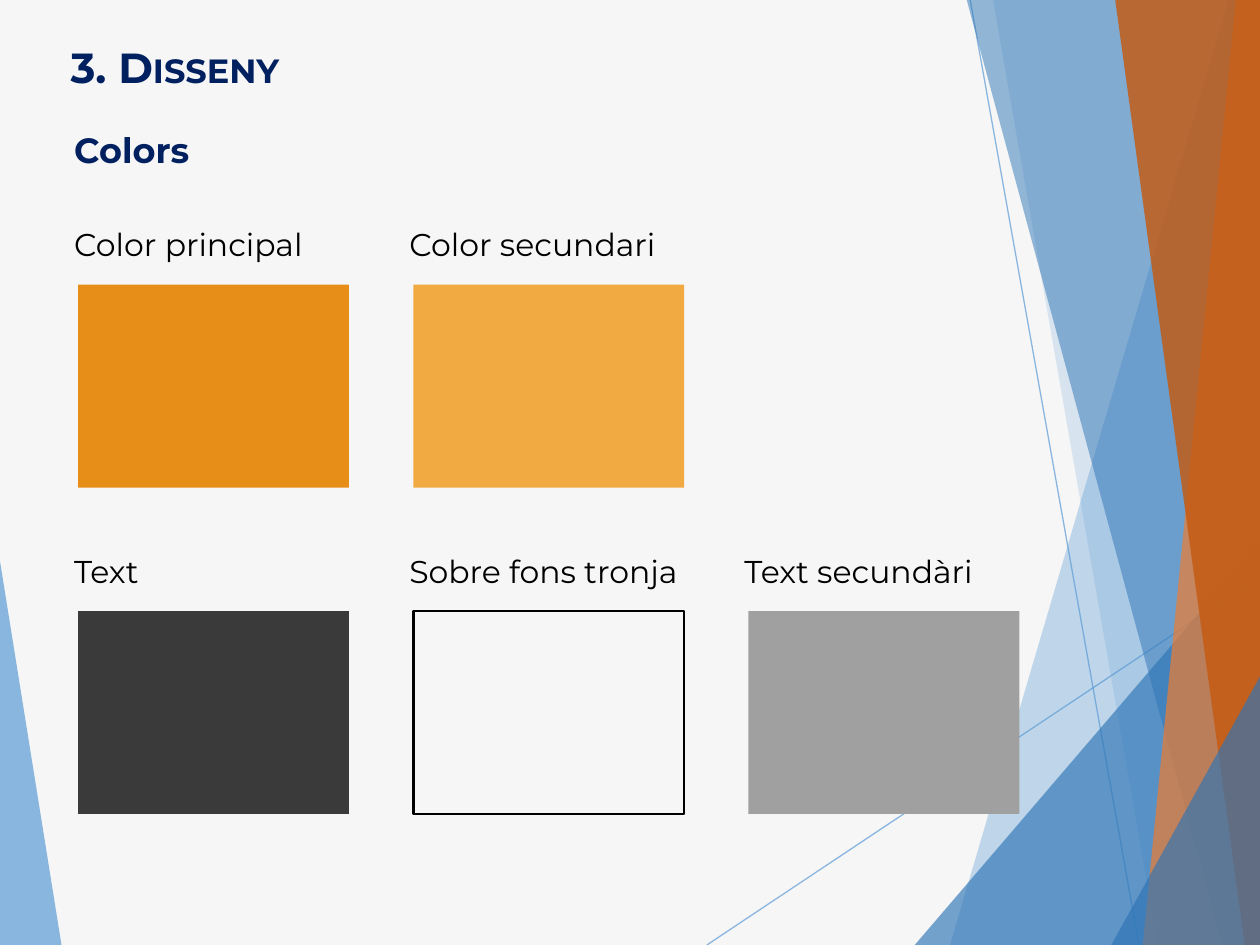
from lxml import etree
from pptx import Presentation
from pptx import util as u
from pptx.dml import color
from pptx.enum import shapes, text
from pptx.oxml import ns

PX = 9144
FONT = "Montserrat"
NAVY, BLUE, DEEP = "002060", "5B9BD5", "2E75B6"
RIGHT, BASE = 1001, 750

LINES = [(561, 750, 1001, 457), (770, 0, 904, 750)]
PANELS = [
    (BLUE, 70, [(-1, 439), (49, 751), (-1, 750)]),
    (BLUE, 36, [(975, 0), (754, BASE), (RIGHT, BASE), (RIGHT, 0)]),
    (BLUE, 20, [(788, -1), (919, BASE), (RIGHT, BASE), (RIGHT, -1)]),
    (DEEP, 66, [(726, BASE), (RIGHT, 429), (RIGHT, BASE)]),
    (DEEP, 50, [(767, -1), (970, BASE), (RIGHT, BASE), (RIGHT, -1)]),
    ("ED7D31", 70, [(981, -1), (907, BASE), (RIGHT, BASE), (RIGHT, -1)]),
    ("C55A11", 82, [(885, -1), (988, BASE), (RIGHT, BASE), (RIGHT, -1)]),
    (DEEP, 66, [(882, BASE), (RIGHT, 535), (RIGHT, BASE)]),
]
ROWS = [
    [("Color principal", 210, "E78E19"), ("Color secundari", 218, "F0AA41")],
    [("Text", 74, "3A3A3A"), ("Sobre fons tronja", 236, None),
     ("Text secundàri", 205, "A0A0A0")],
]


def px(*vals):
    """Turn px lengths into EMU."""
    return [u.Emu(v * PX) for v in vals]


def paint(fill, code):
    """Give a fill one solid colour."""
    fill.solid()
    fill.fore_color.rgb = color.RGBColor.from_string(code)


def fade(shape, pct):
    """Set the opacity of every colour in a shape."""
    for tag in shape._element.spPr.iter(ns.qn("a:srgbClr")):
        etree.SubElement(tag, ns.qn("a:alpha")).set("val", str(pct * 1000))


def write(shape, runs, size, code, bold=False):
    """Fill a text shape with one line of (words, small caps) runs."""
    frame = shape.text_frame
    frame.word_wrap = False
    frame.auto_size = text.MSO_AUTO_SIZE.SHAPE_TO_FIT_TEXT
    frame.vertical_anchor = text.MSO_ANCHOR.TOP
    para = frame.paragraphs[0]
    para.alignment = text.PP_ALIGN.LEFT
    for words, small in runs:
        run = para.add_run()
        run.text = words
        run.font.name, run.font.size, run.font.bold = FONT, u.Pt(size), bold
        paint(run.font.fill, code)
        if small:
            run.font._element.set("cap", "small")


def label(slide, box, words, size, code, bold=False):
    """Add a text box with one run."""
    write(slide.shapes.add_textbox(*px(*box)), [(words, False)], size, code, bold)


def title(slide, box):
    """Place the slide title."""
    head = slide.shapes.title
    head.left, head.top, head.width, head.height = px(*box)
    write(head, [("3. ", False), ("Disseny", True)], 24, NAVY, True)


def decor(slide):
    """Draw the translucent panels and thin lines at the slide edges."""
    def panel(code, pct, pts):
        """Draw one panel."""
        form = slide.shapes.build_freeform(*pts[0], scale=PX)
        form.add_line_segments(pts[1:], close=True)
        shape = form.convert_to_shape()
        shape.shadow.inherit = False
        paint(shape.fill, code)
        shape.line.fill.background()
        fade(shape, pct)

    panel(*PANELS[0])
    for ends in LINES:
        line = slide.shapes.add_connector(shapes.MSO_CONNECTOR.STRAIGHT, *px(*ends))
        paint(line.line.fill, BLUE)
        line.line.width = u.Pt(0.75)
        fade(line, 70)
        etree.SubElement(line._element.spPr, ns.qn("a:effectLst"))
    for part in PANELS[1:]:
        panel(*part)


def swatch(slide, x, y, name, wide, code):
    """Place a named colour sample, outlined when it has no fill."""
    label(slide, (x, y, wide, 40), name, 18, "000000")
    tile = slide.shapes.add_shape(
        shapes.MSO_SHAPE.RECTANGLE, *px(x + 13, y + 52, 215, 161))
    tile.shadow.inherit = False
    if code:
        paint(tile.fill, code)
        tile.line.fill.background()
    else:
        tile.fill.background()
        paint(tile.line.fill, "000000")
        tile.line.width = u.Pt(1.5)


def palette(slide, x, y):
    """Lay the swatches out on a grid."""
    for i, row in enumerate(ROWS):
        for j, item in enumerate(row):
            swatch(slide, x + 266 * j, y + 259 * i, *item)


def main():
    """Build and save the slide."""
    deck = Presentation()
    deck.slide_width, deck.slide_height = px(1000, 750)
    slide = deck.slides.add_slide(deck.slide_layouts.get_by_name("Title Only"))
    paint(slide.background.fill, "F6F6F6")
    decor(slide)
    title(slide, (46, 28, 187, 50))
    label(slide, (49, 97, 113, 44), "Colors", 20, NAVY, True)
    palette(slide, 49, 174)
    deck.save("out.pptx")


if __name__ == "__main__":
    main()
